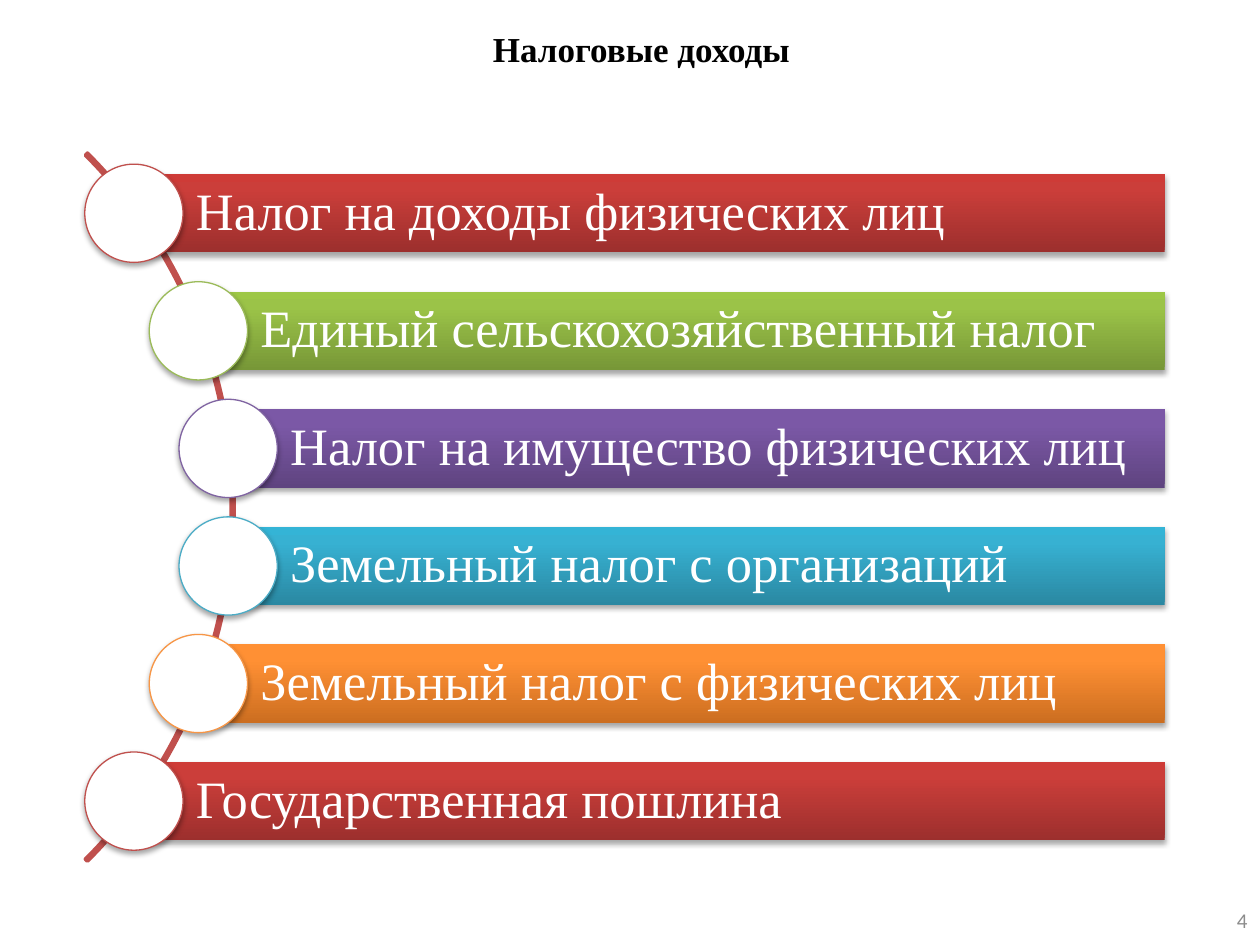
"""Build a slide that lists tax revenues along a curved arc."""
import copy

import lxml.etree
import pptx
import pptx.dml.color
import pptx.enum.shapes
import pptx.enum.text
import pptx.oxml.ns
import pptx.util

Cm = pptx.util.Cm
Pt = pptx.util.Pt
qn = pptx.oxml.ns.qn
SHAPE = pptx.enum.shapes.MSO_SHAPE
ALIGN = pptx.enum.text.PP_ALIGN
ANCHOR = pptx.enum.text.MSO_ANCHOR

COLOURS = {"white": "FFFFFF", "black": "000000", "grey": "8C8C8C", "arc": "C0504D"}
THEMES = {
    "red": {"line": "C0504D", "stops": ("9C2F2D", "CB3E3A", "CE3B37")},
    "green": {"line": "9BBB59", "stops": ("779737", "9BC348", "9DC746")},
    "purple": {"line": "8064A2", "stops": ("5F4480", "7B58A6", "7C57A8")},
    "blue": {"line": "4BACC6", "stops": ("2A88A2", "37B1D2", "34B4D6")},
    "orange": {"line": "F79646", "stops": ("CC6E20", "FF9034", "FF9136")},
}
STOP_POSITIONS = (0, 0.8, 1)
TAXES = [
    ("Налог на доходы физических лиц", "red", 1.71),
    ("Единый сельскохозяйственный налог", "green", 3.01),
    ("Налог на имущество физических лиц", "purple", 3.61),
    ("Земельный налог с организаций", "blue", 3.61),
    ("Земельный налог с физических лиц", "orange", 3.01),
    ("Государственная пошлина", "red", 1.71),
]
FIRST_CENTRE, PITCH = 4.3, 2.37
CIRCLE_SIZE, BAR_HEIGHT, BAR_RIGHT = 1.98, 1.58, 23.48

TITLE_FONT = {"name": "Times New Roman", "size": Pt(20), "bold": True}
BAR_FONT = {"name": "Times New Roman", "size": Pt(30), "bold": False}
NUMBER_FONT = {"name": "Calibri", "size": Pt(12), "bold": False}
BAR_FRAME = {
    "word_wrap": True, "vertical_anchor": ANCHOR.MIDDLE, "margin_left": Cm(1.25),
    "margin_top": Cm(0.2), "margin_right": Cm(0.2), "margin_bottom": Cm(0.2),
}


def rgb(value):
    """Turn a hex string into a colour."""
    return pptx.dml.color.RGBColor.from_string(value)


def set_values(target, values):
    """Set every attribute named in a dict."""
    for name, value in values.items():
        setattr(target, name, value)


def write_text(shape, text, font, colour, frame, paragraph_format):
    """Fill a shape with one formatted paragraph."""
    set_values(shape.text_frame, frame)
    paragraph = shape.text_frame.paragraphs[0]
    set_values(paragraph, paragraph_format)
    run = paragraph.add_run()
    run.text = text
    set_values(run.font, font)
    run.font.color.rgb = rgb(COLOURS[colour])


def add_label(slide, box, text, font, colour, anchor, alignment):
    """Add a wrapping text box."""
    shape = slide.shapes.add_textbox(*map(Cm, box))
    frame = {"word_wrap": True, "vertical_anchor": anchor}
    write_text(shape, text, font, colour, frame, {"alignment": alignment})


def add_plain_shape(slide, kind, box):
    """Add a preset shape without its theme shadow."""
    shape = slide.shapes.add_shape(kind, *map(Cm, box))
    shape.shadow.inherit = False
    return shape


def add_shadow(shape):
    """Give a shape a soft shadow below it."""
    effects = shape._element.spPr.find(qn("a:effectLst"))
    shadow = lxml.etree.SubElement(
        effects, qn("a:outerShdw"), blurRad="40000", dist="23000",
        dir="5400000", rotWithShape="0")
    colour = lxml.etree.SubElement(shadow, qn("a:srgbClr"), val=COLOURS["black"])
    lxml.etree.SubElement(colour, qn("a:alpha"), val="35000")


def fill_gradient(shape, colours):
    """Fill a shape with three colours running upwards."""
    shape.fill.gradient()
    shape.fill.gradient_angle = 90
    stop_list = shape._element.spPr.find(".//" + qn("a:gsLst"))
    stop_list.append(copy.deepcopy(stop_list[-1]))
    for stop, colour, position in zip(shape.fill.gradient_stops, colours, STOP_POSITIONS):
        stop.color.rgb = rgb(colour)
        stop.position = position


def add_arc(slide):
    """Add the thin arc that links the circles."""
    arc = add_plain_shape(slide, SHAPE.BLOCK_ARC, (-15.47, 0.13, 20.19, 20.19))
    for index, value in enumerate((189, 27, 0.003)):
        arc.adjustments[index] = value
    arc.fill.background()
    arc.line.color.rgb = rgb(COLOURS["arc"])
    arc.line.width = Pt(2)


def add_tax(slide, text, theme, left, centre):
    """Add one tax bar with the circle at its left end."""
    radius = CIRCLE_SIZE / 2
    bar_left = left + radius
    bar = add_plain_shape(slide, SHAPE.RECTANGLE, (
        bar_left, centre - BAR_HEIGHT / 2, BAR_RIGHT - bar_left, BAR_HEIGHT))
    fill_gradient(bar, theme["stops"])
    bar.line.fill.background()
    add_shadow(bar)
    write_text(bar, text, BAR_FONT, "white", BAR_FRAME,
               {"alignment": ALIGN.LEFT, "line_spacing": 0.9})

    circle = add_plain_shape(slide, SHAPE.OVAL, (
        left, centre - radius, CIRCLE_SIZE, CIRCLE_SIZE))
    circle.fill.solid()
    circle.fill.fore_color.rgb = rgb(COLOURS["white"])
    circle.line.color.rgb = rgb(theme["line"])
    circle.line.width = Pt(0.75)
    add_shadow(circle)


def main():
    """Build and save the presentation."""
    presentation = pptx.Presentation()
    presentation.slide_width = Cm(25.4)
    presentation.slide_height = Cm(19.05)
    slide = presentation.slides.add_slide(presentation.slide_layouts[6])
    add_label(slide, (1.35, 0.43, 23.16, 2.11), "Налоговые доходы",
              TITLE_FONT, "black", ANCHOR.TOP, ALIGN.CENTER)
    add_arc(slide)
    for index, (text, theme, left) in enumerate(TAXES):
        add_tax(slide, text, THEMES[theme], left, FIRST_CENTRE + index * PITCH)
    add_label(slide, (19.48, 18.03, 5.92, 1.02), "4",
              NUMBER_FONT, "grey", ANCHOR.MIDDLE, ALIGN.RIGHT)
    presentation.save("out.pptx")


if __name__ == "__main__":
    main()
